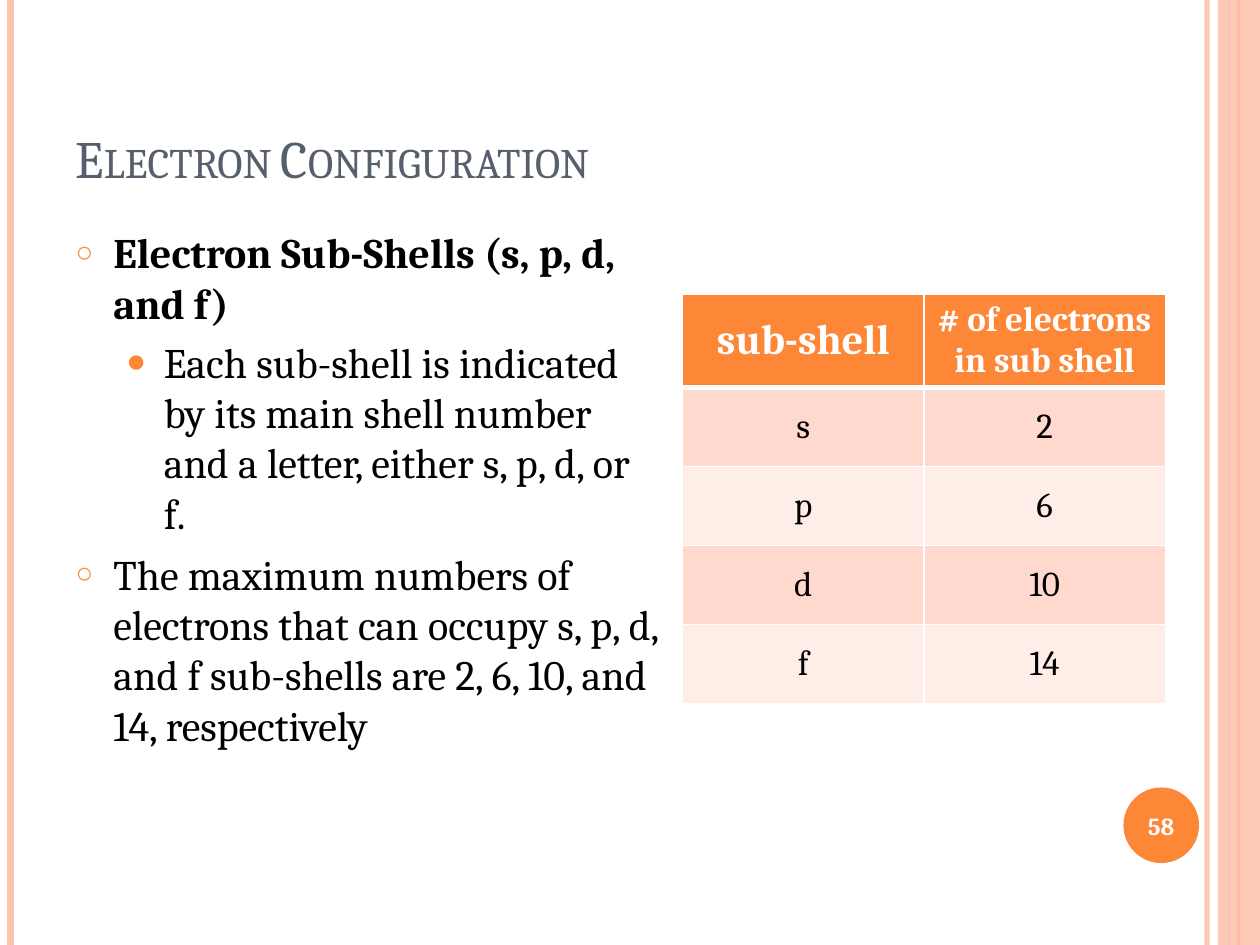
from lxml.etree import SubElement
from pptx import Presentation
from pptx.dml.color import RGBColor
from pptx.enum.shapes import MSO_CONNECTOR, MSO_SHAPE
from pptx.enum.text import MSO_ANCHOR, MSO_AUTO_SIZE, PP_ALIGN
from pptx.oxml.ns import qn
from pptx.util import Pt

FONT = "Cambria"
ORANGE, PEACH, WHITE, BLACK, SLATE = "FE8637", "FEC3AE", "FFFFFF", "000000", "575F6D"
BANDS = ["FFD9CE", "FFEDE8"]
WIDTH, HEIGHT = 720, 540

TITLE = "Electron Configuration"
# text, level, bold
BODY = [
    ("Electron Sub-Shells (s, p, d, and f)", 0, True),
    ("Each sub-shell is indicated by its main shell number and a letter, "
     "either s, p, d, or f.", 1, False),
    ("The maximum numbers of electrons that can occupy s, p, d, and f sub-shells "
     "are 2, 6, 10, and 14, respectively", 0, False),
]
# per level: bullet, bullet size %, left indent, space before
LEVELS = [("○", 70, 21.6, 6), ("●", 80, 50.4, 4.8)]
HANGING = 21.6
HEADERS = [("sub-shell", 24), ("# of electrons in sub shell", 20)]
ROWS = [("s", "2"), ("p", "6"), ("d", "10"), ("f", "14")]
PAGE = "58"
# x, line width, colour, opacity %
RULES = [(689.8, 3, PEACH, 93), (6, 4.5, PEACH, 100),
         (707.8, 1.5, ORANGE, 100), (702, 0.75, ORANGE, 100)]


def rgb(value):
    return RGBColor.from_string(value)


def place(shape, x, y, w, h):
    shape.left, shape.top, shape.width, shape.height = Pt(x), Pt(y), Pt(w), Pt(h)


def write(p, text, size=24, color=BLACK, bold=False, align=PP_ALIGN.LEFT, small_caps=False):
    p.alignment = align
    r = p.add_run()
    r.text = text
    f = r.font
    f.name, f.size, f.bold = FONT, Pt(size), bold
    f.color.rgb = rgb(color)
    if small_caps:
        r._r.get_or_add_rPr().set("cap", "small")


def set_alpha(fill_parent, percent):
    color = next(fill_parent.iter(qn("a:srgbClr")))
    SubElement(color, qn("a:alpha")).set("val", str(percent * 1000))


def add_rule(s, x, width, color, opacity):
    line = s.shapes.add_connector(MSO_CONNECTOR.STRAIGHT, Pt(x), 0, Pt(x), Pt(HEIGHT))
    line.line.width = Pt(width)
    line.line.color.rgb = rgb(color)
    sp_pr = line._element.spPr
    if opacity < 100:
        set_alpha(sp_pr, opacity)
    SubElement(sp_pr, qn("a:effectLst"))


def add_block(s, kind, x, y, w, h, color):
    sp = s.shapes.add_shape(kind, Pt(x), Pt(y), Pt(w), Pt(h))
    sp.shadow.inherit = False
    sp.fill.solid()
    sp.fill.fore_color.rgb = rgb(color)
    sp.line.fill.background()
    return sp


def set_bullet(p, level):
    char, size, indent, before = LEVELS[level]
    p.level = level
    p.space_before = Pt(before)
    p_pr = p._p.get_or_add_pPr()
    p_pr.set("marL", str(Pt(indent)))
    p_pr.set("indent", str(Pt(-HANGING)))
    color = SubElement(p_pr, qn("a:buClr"))
    SubElement(color, qn("a:srgbClr")).set("val", ORANGE)
    SubElement(p_pr, qn("a:buSzPct")).set("val", str(size * 1000))
    SubElement(p_pr, qn("a:buChar")).set("char", char)


def fill_cell(cell, text, fill, top=1, bottom=1, **fmt):
    tc_pr = cell._tc.get_or_add_tcPr()
    for side, width in (("L", 1), ("R", 1), ("T", top), ("B", bottom)):
        ln = SubElement(tc_pr, qn(f"a:ln{side}"), w=str(Pt(width)))
        SubElement(SubElement(ln, qn("a:solidFill")), qn("a:srgbClr")).set("val", WHITE)
    cell.fill.solid()
    cell.fill.fore_color.rgb = rgb(fill)
    cell.vertical_anchor = MSO_ANCHOR.MIDDLE
    write(cell.text_frame.paragraphs[0], text, align=PP_ALIGN.CENTER, **fmt)


def add_shell_table(s):
    row_height, header_height = 45.2, 52.4
    height = header_height + row_height * len(ROWS)
    table = s.shapes.add_table(len(ROWS) + 1, len(HEADERS),
                               Pt(390), Pt(168), Pt(276), Pt(height)).table
    for row in table.rows:
        row.height = Pt(row_height)
    table.rows[0].height = Pt(header_height)
    for c, (text, size) in enumerate(HEADERS):
        fill_cell(table.cell(0, c), text, ORANGE, bottom=3, size=size, color=WHITE, bold=True)
    for r, values in enumerate(ROWS):
        for c, text in enumerate(values):
            fill_cell(table.cell(r + 1, c), text, BANDS[r % 2], top=1 if r else 3, size=20)


def main():
    prs = Presentation()
    prs.slide_width, prs.slide_height = Pt(WIDTH), Pt(HEIGHT)
    s = prs.slides.add_slide(prs.slide_layouts[1])

    for rule in RULES:
        add_rule(s, *rule)
    band = add_block(s, MSO_SHAPE.RECTANGLE, 696, 0, 24, HEIGHT, PEACH)
    set_alpha(band._element.spPr, 87)

    title, body = s.placeholders
    place(title, 36, 21.6, 588, 90)
    place(body, 36, 126, 348, 372)
    for ph, anchor in ((title, MSO_ANCHOR.BOTTOM), (body, MSO_ANCHOR.TOP)):
        ph.text_frame.auto_size = MSO_AUTO_SIZE.NONE
        ph.text_frame.vertical_anchor = anchor
    write(title.text_frame.paragraphs[0], TITLE, size=30, color=SLATE, small_caps=True)
    tf = body.text_frame
    for i, (text, level, bold) in enumerate(BODY):
        p = tf.add_paragraph() if i else tf.paragraphs[0]
        set_bullet(p, level)
        write(p, text, bold=bold)

    add_shell_table(s)

    badge = add_block(s, MSO_SHAPE.OVAL, 642, 450, 43.2, 43.2, ORANGE)
    tf = badge.text_frame
    tf.margin_left = tf.margin_right = 0
    tf.vertical_anchor = MSO_ANCHOR.MIDDLE
    write(tf.paragraphs[0], PAGE, size=14, color=WHITE, bold=True, align=PP_ALIGN.CENTER)

    prs.save("out.pptx")


if __name__ == "__main__":
    main()
